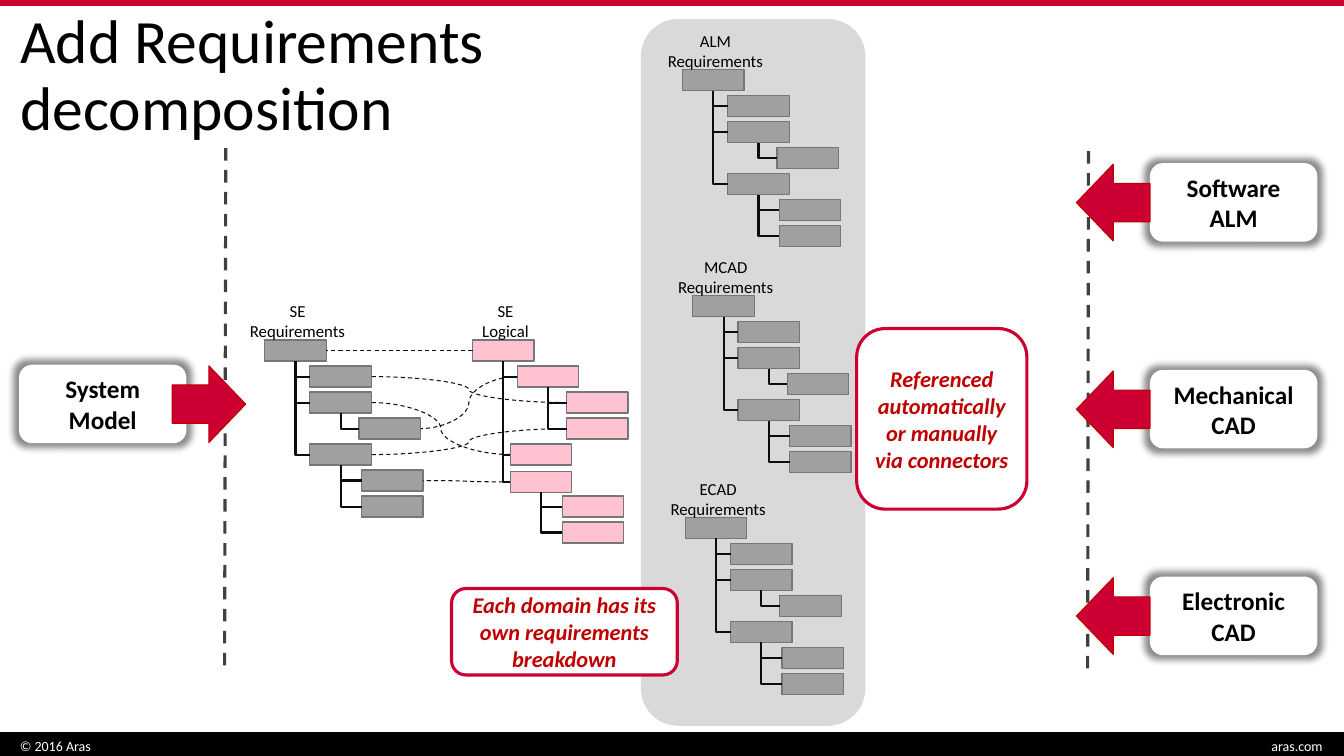
"""Builds the slide on requirements decomposition across engineering domains."""
from lxml.etree import SubElement
from pptx import Presentation
from pptx.dml.color import RGBColor
from pptx.enum.dml import MSO_LINE
from pptx.enum.shapes import MSO_CONNECTOR, MSO_SHAPE
from pptx.enum.text import MSO_ANCHOR, PP_ALIGN
from pptx.oxml.ns import qn
from pptx.util import Cm, Pt

BLACK, WHITE, RED, DARK_RED = "000000", "FFFFFF", "CC0033", "C00000"
PANEL_GREY, NODE_GREY, NODE_PINK = "D9D9D9", "A0A0A0", "FFC2D1"
NODE_EDGE, BRANCH, DIVIDER = "767676", "0D0D0D", "404040"
NODE_WIDTH, NODE_HEIGHT, ROW = 1.55, 0.53, 0.655

TITLE = {"size": Pt(44)}
FOOTER = {"size": Pt(10)}
TREE_LABEL = {"size": Pt(12)}
CARD = {"size": Pt(18), "bold": True}
CALLOUT = {"size": Pt(16), "bold": True, "italic": True}

REQUIREMENT_NODES = [(0, 0, None), (1.14, 1, 0), (1.14, 2, 0), (2.38, 3, 2),
                     (1.14, 4, 0), (2.44, 5, 4), (2.44, 6, 4)]
LOGICAL_NODES = [(0, 0, None), (1.13, 1, 0), (2.37, 2, 1), (2.37, 3, 1),
                 (0.95, 4, 0), (0.95, 5.05, 0), (2.26, 6, 5), (2.26, 7, 5)]
TRACES = [(0, 0), (1, 3), (2, 1), (4, 2), (3, 4), (5, 5)]


def color(value):
    """Turn a hex string into a colour."""
    return RGBColor.from_string(value)


class SlideBuilder:
    """Holds the text style and the current slide, and draws its elements."""

    font_name = "Calibri"

    def __init__(self, slide):
        """Start drawing on the given slide."""
        self.slide = slide
        self.shapes = slide.shapes

    def set_text(self, frame, text, style, ink=BLACK, align=PP_ALIGN.CENTER):
        """Fill a text frame with styled paragraphs."""
        frame.text = text
        frame.word_wrap = True
        frame.vertical_anchor = MSO_ANCHOR.MIDDLE
        for paragraph in frame.paragraphs:
            paragraph.alignment = align
            for run in paragraph.runs:
                run.font.color.rgb = color(ink)
                for key, value in {"name": self.font_name, **style}.items():
                    setattr(run.font, key, value)

    def title(self, text, box):
        """Place and format the title placeholder."""
        heading = self.slide.shapes.title
        for key, value in zip(("left", "top", "width", "height"), box):
            setattr(heading, key, Cm(value))
        self.set_text(heading.text_frame, text, TITLE, align=PP_ALIGN.LEFT)
        heading.text_frame.margin_left = Cm(0.51)
        heading.text_frame.paragraphs[0].line_spacing = 0.9

    def block(self, kind, box, fill, edge=None, weight=0.85):
        """Draw a filled preset shape."""
        block = self.shapes.add_shape(kind, *map(Cm, box))
        block.shadow.inherit = False
        block.fill.solid()
        block.fill.fore_color.rgb = color(fill)
        if edge:
            block.line.color.rgb = color(edge)
            block.line.width = Pt(weight)
        else:
            block.line.fill.background()
        return block

    def label(self, text, box, style, ink=BLACK, align=PP_ALIGN.CENTER):
        """Add a text box."""
        label = self.shapes.add_textbox(*map(Cm, box))
        self.set_text(label.text_frame, text, style, ink, align)

    def connector(self, kind, ends, ink, weight, dashed=False):
        """Draw a line without shadow."""
        link = self.shapes.add_connector(kind, *map(Cm, ends))
        link.line.color.rgb = color(ink)
        link.line.width = Pt(weight)
        if dashed:
            link.line.dash_style = MSO_LINE.DASH
        SubElement(link._element.spPr, qn("a:effectLst"))
        return link

    def branch(self, parent, child):
        """Link the bottom of a parent node to the left side of its child."""
        corner = [child.left.cm, child.top.cm] * 2
        link = self.connector(MSO_CONNECTOR.ELBOW, corner, BRANCH, 1.5)
        link.begin_connect(parent, 2)
        link.end_connect(child, 1)
        run, drop = link.width, link.height
        link.left += (run - drop) // 2
        link.top += (drop - run) // 2
        link.width, link.height = drop, run
        properties = link._element.spPr
        properties.find(qn("a:prstGeom")).set("prst", "bentConnector2")
        frame = properties.find(qn("a:xfrm"))
        frame.set("rot", "16200000")
        frame.set("flipH", "1")
        frame.set("flipV", "0")

    def trace(self, logical, requirement):
        """Draw a dashed curve from a logical node to a requirement."""
        link = self.connector(MSO_CONNECTOR.CURVE, (0, 0, 0, 0), BRANCH, 0.75, True)
        link.begin_connect(logical, 1)
        link.end_connect(requirement, 3)

    def tree(self, name, left, top, layout, fill):
        """Draw a grouped, labelled tree and return its nodes."""
        self.shapes = self.slide.shapes.add_group_shape().shapes
        nodes = []
        for indent, row, _ in layout:
            box = (left + indent, top + row * ROW, NODE_WIDTH, NODE_HEIGHT)
            nodes.append(self.block(MSO_SHAPE.RECTANGLE, box, fill, NODE_EDGE))
        for node, (_, _, parent) in zip(nodes, layout):
            if parent is not None:
                self.branch(nodes[parent], node)
        self.label(name, (left - 0.63, top - 0.9, 2.92, 0.84), TREE_LABEL)
        self.shapes = self.slide.shapes
        return nodes

    def card(self, text, left, top, arrow, arrow_left):
        """Draw a shadowed tool card with its arrow."""
        card = self.block(MSO_SHAPE.ROUNDED_RECTANGLE, (left, top, 4.22, 1.98), WHITE)
        self.set_text(card.text_frame, text, CARD)
        effects = card._element.spPr.find(qn("a:effectLst"))
        shadow = SubElement(effects, qn("a:outerShdw"), blurRad="63500", sx="106000",
                            sy="112000", algn="ctr", rotWithShape="0")
        tint = SubElement(shadow, qn("a:srgbClr"), val=BLACK)
        SubElement(tint, qn("a:alpha"), val="45000")
        self.block(arrow, (arrow_left, top + 0.03, 1.85, 1.93), RED, DARK_RED)

    def callout(self, text, box):
        """Draw a red-edged remark."""
        callout = self.block(MSO_SHAPE.ROUNDED_RECTANGLE, box, WHITE, RED, 2.25)
        self.set_text(callout.text_frame, text, CALLOUT, DARK_RED)


def main():
    """Build and save the slide."""
    deck = Presentation()
    deck.slide_width, deck.slide_height = Cm(33.87), Cm(19.05)
    page = SlideBuilder(deck.slides.add_slide(deck.slide_layouts[5]))

    page.block(MSO_SHAPE.RECTANGLE, (0, 18.47, 33.87, 0.58), BLACK, BLACK)
    page.block(MSO_SHAPE.RECTANGLE, (0, 0, 33.87, 0.13), RED, RED)
    page.block(MSO_SHAPE.ROUNDED_RECTANGLE, (16.15, 0.48, 5.66, 17.81), PANEL_GREY)
    page.title("Add Requirements\vdecomposition", (0, 0, 28.04, 3.89))
    page.label("© 2016 Aras", (0.25, 18.47, 10.41, 0.63), FOOTER, WHITE, PP_ALIGN.LEFT)
    page.label("aras.com", (23.14, 18.47, 10.44, 0.63), FOOTER, WHITE, PP_ALIGN.RIGHT)

    for ends in ((5.69, 3.73, 5.66, 16.84), (27.43, 3.81, 27.41, 16.89)):
        page.connector(MSO_CONNECTOR.STRAIGHT, ends, DIVIDER, 2.25, True)

    logical = page.tree("SE\nLogical", 11.91, 8.57, LOGICAL_NODES, NODE_PINK)
    system = page.tree("SE Requirements", 6.67, 8.57, REQUIREMENT_NODES, NODE_GREY)
    for function, requirement in TRACES:
        page.trace(logical[function], system[requirement])
    for domain, left, top in (("ALM", 17.2, 1.76), ("MCAD", 17.46, 7.45),
                              ("ECAD", 17.27, 13.04)):
        page.tree(f"{domain} Requirements", left, top, REQUIREMENT_NODES, NODE_GREY)

    page.card("System Model", 0.48, 9.19, MSO_SHAPE.RIGHT_ARROW, 4.34)
    for order, tool in enumerate(("Software ALM", "Mechanical CAD", "Electronic CAD")):
        page.card(tool, 28.98, 4.11 + order * 5.21, MSO_SHAPE.LEFT_ARROW, 27.13)
    page.callout("Each domain has its own requirements breakdown",
                 (11.38, 14.83, 5.69, 2.18))
    page.callout("Referenced automatically\nor manually via connectors",
                 (21.59, 8.28, 4.29, 4.55))
    deck.save("out.pptx")


if __name__ == "__main__":
    main()
